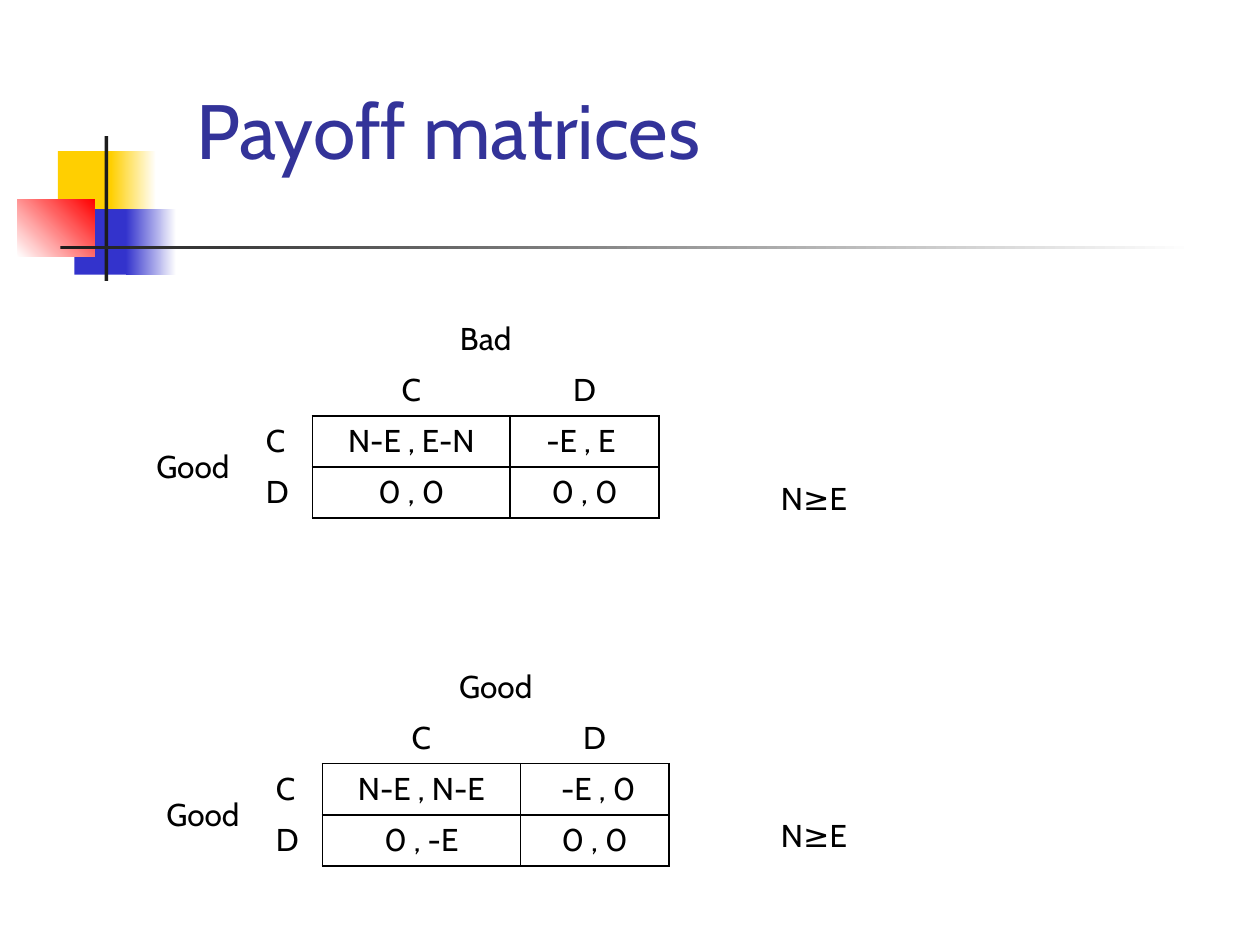
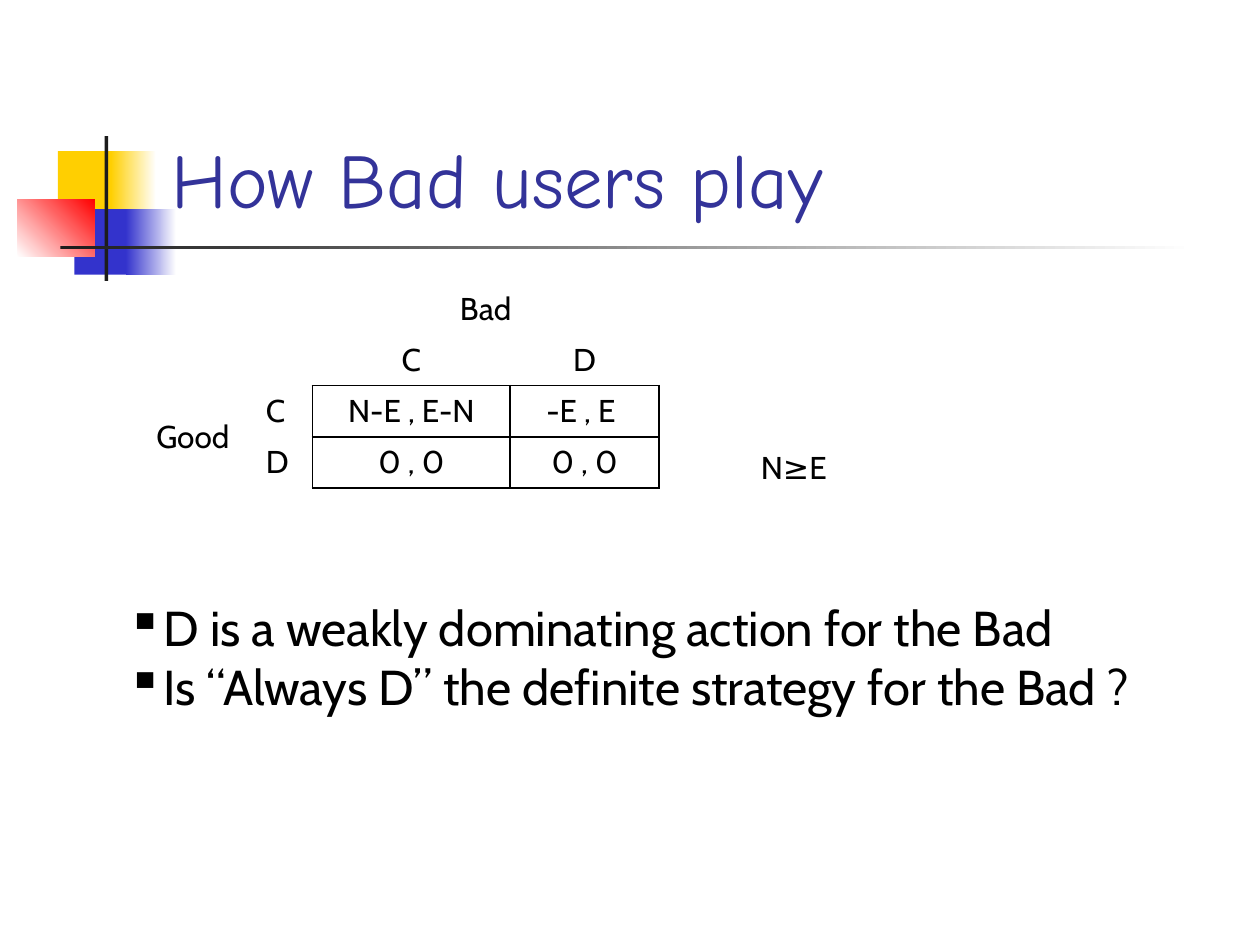
from lxml.etree import SubElement
from pptx import Presentation
from pptx.dml.color import RGBColor
from pptx.enum.shapes import MSO_SHAPE
from pptx.enum.text import MSO_ANCHOR, MSO_AUTO_SIZE, PP_ALIGN
from pptx.oxml import parse_xml
from pptx.oxml.ns import nsdecls, qn
from pptx.util import Inches, Pt

BODY_FONT = "Cabin"
BLACK, WHITE, TITLE_BLUE = "000000", "FFFFFF", "333399"
YELLOW, BLUE, RED, CHARCOAL = "FFCF01", "3333CC", "FF0000", "1C1C1C"
COLUMN_WIDTHS = [0.87, 0.47, 1.57, 1.18]
ROW_HEIGHT = 0.405


def color(hex_value):
    return RGBColor.from_string(hex_value)


def write(frame, *lines, size=18, font=BODY_FONT, ink=BLACK, align=PP_ALIGN.LEFT,
          anchor=MSO_ANCHOR.TOP, bullet=None):
    frame.word_wrap = True
    frame.vertical_anchor = anchor
    for index, line in enumerate(lines):
        paragraph = frame.add_paragraph() if index else frame.paragraphs[0]
        paragraph.text = line
        paragraph.alignment = align
        if bullet:
            properties = paragraph._p.get_or_add_pPr()
            properties.set("marL", str(Inches(0.23)))
            properties.set("indent", str(-Inches(0.23)))
            SubElement(properties, qn("a:buChar")).set("char", bullet)
        paragraph.font.size = Pt(size)
        paragraph.font.name = font
        paragraph.font.color.rgb = color(ink)


presentation = Presentation()
presentation.slide_width, presentation.slide_height = Inches(10), Inches(7.5)
title_only = presentation.slide_layouts[5]

# Titles, payoff matrices (place, column player, payoffs), conditions and bullets
bad_payoffs = [["N-E , E-N", "-E , E "], ["0 , 0", "0 , 0"]]
good_payoffs = [["N-E , N-E", " -E , 0"], ["0 , -E", "0 , 0"]]
slides = [
    dict(title="Payoff matrices", title_font=BODY_FONT, title_at=(1.46, 0.44, 8.25, 1),
         matrices=[(1.14, 2.49, "Bad", bad_payoffs), (1.22, 5.25, "Good", good_payoffs)],
         conditions=[(6.1, 3.75), (6.1, 6.43)], conclusions=[]),
    dict(title="How Bad users play", title_font="Comic Neue", title_at=(1.26, 0.23, 8.52, 1.6),
         matrices=[(1.14, 2.25, "Bad", bad_payoffs)],
         conditions=[(5.94, 3.51)],
         conclusions=["D is a weakly dominating action for the Bad",
                      "Is “Always D” the definite strategy for the Bad ?"]),
]

# Shared emblem and rule: place, start colour, end colour, angle
emblem = [
    ((0.46, 1.2, 0.48, 0.52), YELLOW, None, 0),
    ((0.88, 1.2, 0.36, 0.52), YELLOW, WHITE, 0),
    ((0.59, 1.66, 0.46, 0.52), BLUE, None, 0),
    ((1, 1.66, 0.4, 0.52), BLUE, WHITE, 0),
    ((0.14, 1.58, 0.61, 0.46), WHITE, RED, 45),
    ((0.83, 1.08, 0.03, 1.15), CHARCOAL, None, 0),
    ((0.48, 1.95, 9, 0.03), CHARCOAL, WHITE, 0),
]

for number, content in enumerate(slides):
    slide = presentation.slides.add_slide(title_only)

    # The emblem moves to the layout once, behind every slide
    if number == 0:
        for order, (place, start, end, angle) in enumerate(emblem):
            block = slide.shapes.add_shape(MSO_SHAPE.RECTANGLE, *map(Inches, place))
            block.shadow.inherit = False
            block.line.fill.background()
            if end:
                block.fill.gradient()
                block.fill.gradient_angle = angle
                for stop, hex_value in zip(block.fill.gradient_stops, (start, end)):
                    stop.color.rgb = color(hex_value)
            else:
                block.fill.solid()
                block.fill.fore_color.rgb = color(start)
            block._element.nvSpPr.cNvPr.set("id", str(20 + order))
            title_only.shapes._spTree.insert(2 + order, block._element)

    # Title
    title = slide.shapes.title
    title.left, title.top, title.width, title.height = map(Inches, content["title_at"])
    title.text_frame.auto_size = MSO_AUTO_SIZE.NONE
    write(title.text_frame, content["title"], size=44, font=content["title_font"],
          ink=TITLE_BLUE, anchor=MSO_ANCHOR.BOTTOM)

    # Payoff matrices
    for left, top, column_player, payoffs in content["matrices"]:
        matrix = slide.shapes.add_table(
            4, 4, Inches(left), Inches(top),
            Inches(sum(COLUMN_WIDTHS)), Inches(4 * ROW_HEIGHT)).table
        matrix.first_row = matrix.horz_banding = False
        for column, width in zip(matrix.columns, COLUMN_WIDTHS):
            column.width = Inches(width)
        for row in matrix.rows:
            row.height = Inches(ROW_HEIGHT)
        matrix.cell(0, 2).merge(matrix.cell(0, 3))
        matrix.cell(2, 0).merge(matrix.cell(3, 0))

        labels = [["", "", column_player, ""], ["", "", "C", "D"],
                  ["Good", "C", *payoffs[0]], ["", "D", *payoffs[1]]]
        for r, row_labels in enumerate(labels):
            for c, label in enumerate(row_labels):
                cell = matrix.cell(r, c)
                cell.fill.background()
                write(cell.text_frame, label,
                      align=PP_ALIGN.CENTER if c > 1 else PP_ALIGN.LEFT)
                cell.vertical_anchor = MSO_ANCHOR.MIDDLE if c == 0 else MSO_ANCHOR.TOP

                # Payoff cells are framed; their neighbours share the edge
                if r > 1 and c > 1:
                    edges = "LRTB"
                elif r > 1 and c == 1:
                    edges = "R"
                elif r == 1 and c > 1:
                    edges = "B"
                else:
                    edges = ""
                for position, edge in enumerate(edges):
                    cell._tc.get_or_add_tcPr().insert(position, parse_xml(
                        f'<a:ln{edge} {nsdecls("a")} w="{Pt(1)}"><a:solidFill>'
                        f'<a:srgbClr val="{BLACK}"/></a:solidFill></a:ln{edge}>'))

    # Conditions beside the matrices
    for left, top in content["conditions"]:
        condition = slide.shapes.add_textbox(*map(Inches, (left, top, 1.1, 0.4)))
        write(condition.text_frame, "N≥E")

    # Conclusions
    if content["conclusions"]:
        conclusions = slide.shapes.add_textbox(*map(Inches, (0.91, 4.69, 8.66, 1.95)))
        write(conclusions.text_frame, *content["conclusions"], size=28, bullet="▪")

presentation.save("out.pptx")
